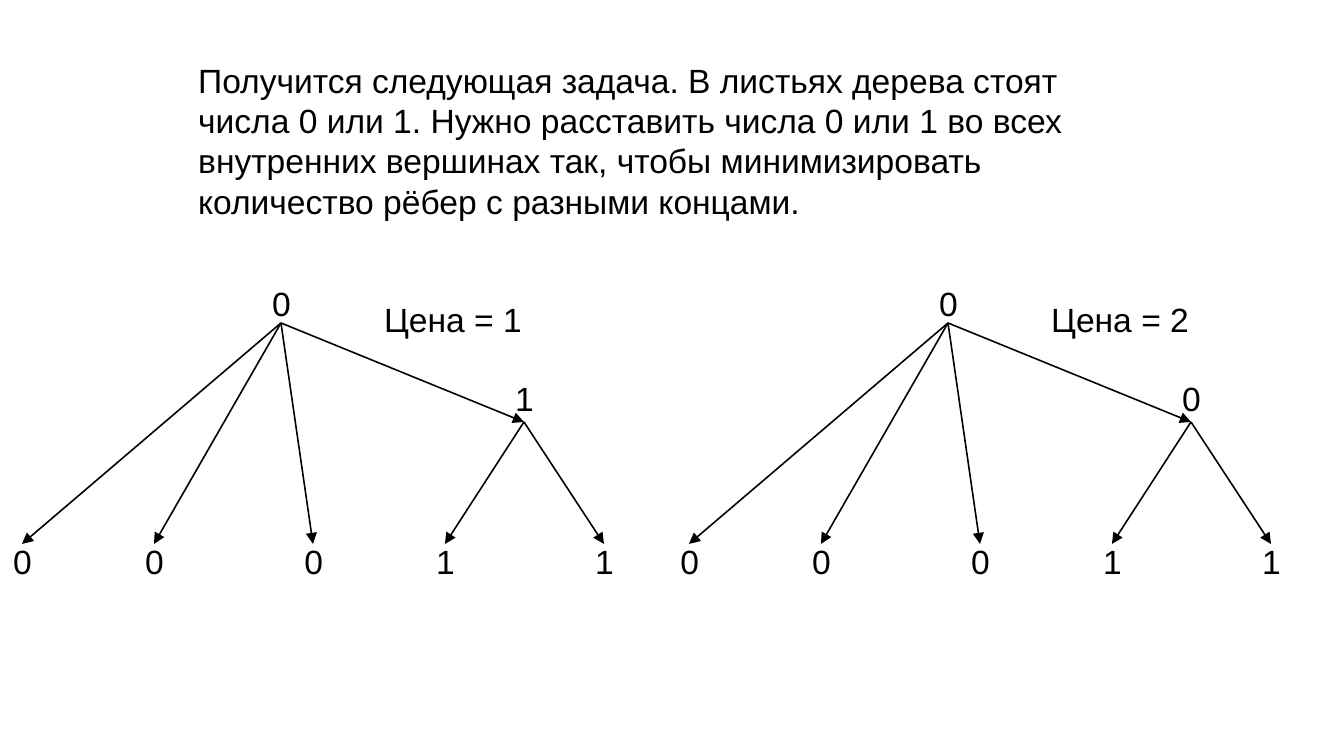
from lxml.etree import SubElement
from pptx import Presentation
from pptx.dml.color import RGBColor
from pptx.enum.shapes import MSO_CONNECTOR
from pptx.oxml.ns import qn
from pptx.util import Emu, Pt

EMU_PER_PX = 914400 / 134.4
COLORS = {"ink": "000000", "background": "FFFFFF"}
FONT = "Arial"
LABEL_HEIGHT = 51
LABEL_INDENT = 22
TREE_STEP = 667
ROOT = (281, 323)
INNER = (524, 422)
LEAF_Y = 544
LEAVES = [(22, 52, "0"), (154, 79, "0"), (313, 79, "0"), (445, 52, "1"), (604, 52, "1")]
ROOT_LEAF_COUNT = 3
TASK = (
    "Получится следующая задача. В листьях дерева стоят числа 0 или 1. "
    "Нужно расставить числа 0 или 1 во всех внутренних вершинах так, "
    "чтобы минимизировать количество рёбер с разными концами."
)


def px(value):
    return Emu(round(value * EMU_PER_PX))


def add_text(slide, text, left, top, width, height=LABEL_HEIGHT):
    shape = slide.shapes.add_textbox(px(left), px(top), px(width), px(height))
    shape.text_frame.word_wrap = True
    run = shape.text_frame.paragraphs[0].add_run()
    run.text = text
    run.font.name = FONT
    run.font.size = Pt(18)
    run.font.color.rgb = RGBColor.from_string(COLORS["ink"])


def add_arrow(slide, start, end):
    connector = slide.shapes.add_connector(
        MSO_CONNECTOR.STRAIGHT, *map(px, start), *map(px, end)
    )
    connector.line.width = Pt(0.85)
    connector.line.color.rgb = RGBColor.from_string(COLORS["ink"])
    properties = connector._element.spPr
    SubElement(properties.find(qn("a:ln")), qn("a:tailEnd"), type="triangle")
    SubElement(properties, qn("a:effectLst"))


def add_tree(slide, offset, inner_value, price):
    root = (ROOT[0] + offset, ROOT[1])
    inner = (INNER[0] + offset, INNER[1])
    for index, (x, width, value) in enumerate(LEAVES):
        tip = (x + offset, LEAF_Y)
        add_text(slide, value, tip[0] - LABEL_INDENT, LEAF_Y - 10, width)
        add_arrow(slide, root if index < ROOT_LEAF_COUNT else inner, tip)
    add_arrow(slide, root, inner)
    add_text(slide, inner_value, inner[0] - LABEL_INDENT, 371, 106)
    add_text(slide, "0", root[0] - LABEL_INDENT, 276, 106)
    add_text(slide, f"Цена = {price}", 371 + offset, 292, 265)


def main():
    presentation = Presentation()
    presentation.slide_width = px(1344)
    presentation.slide_height = px(756)
    slide = presentation.slides.add_slide(presentation.slide_layouts[6])
    slide.background.fill.solid()
    slide.background.fill.fore_color.rgb = RGBColor.from_string(COLORS["background"])
    add_text(slide, TASK, 185, 53, 899, 239)
    for index, (inner_value, price) in enumerate([("1", 1), ("0", 2)]):
        add_tree(slide, index * TREE_STEP, inner_value, price)
    presentation.save("out.pptx")


if __name__ == "__main__":
    main()
